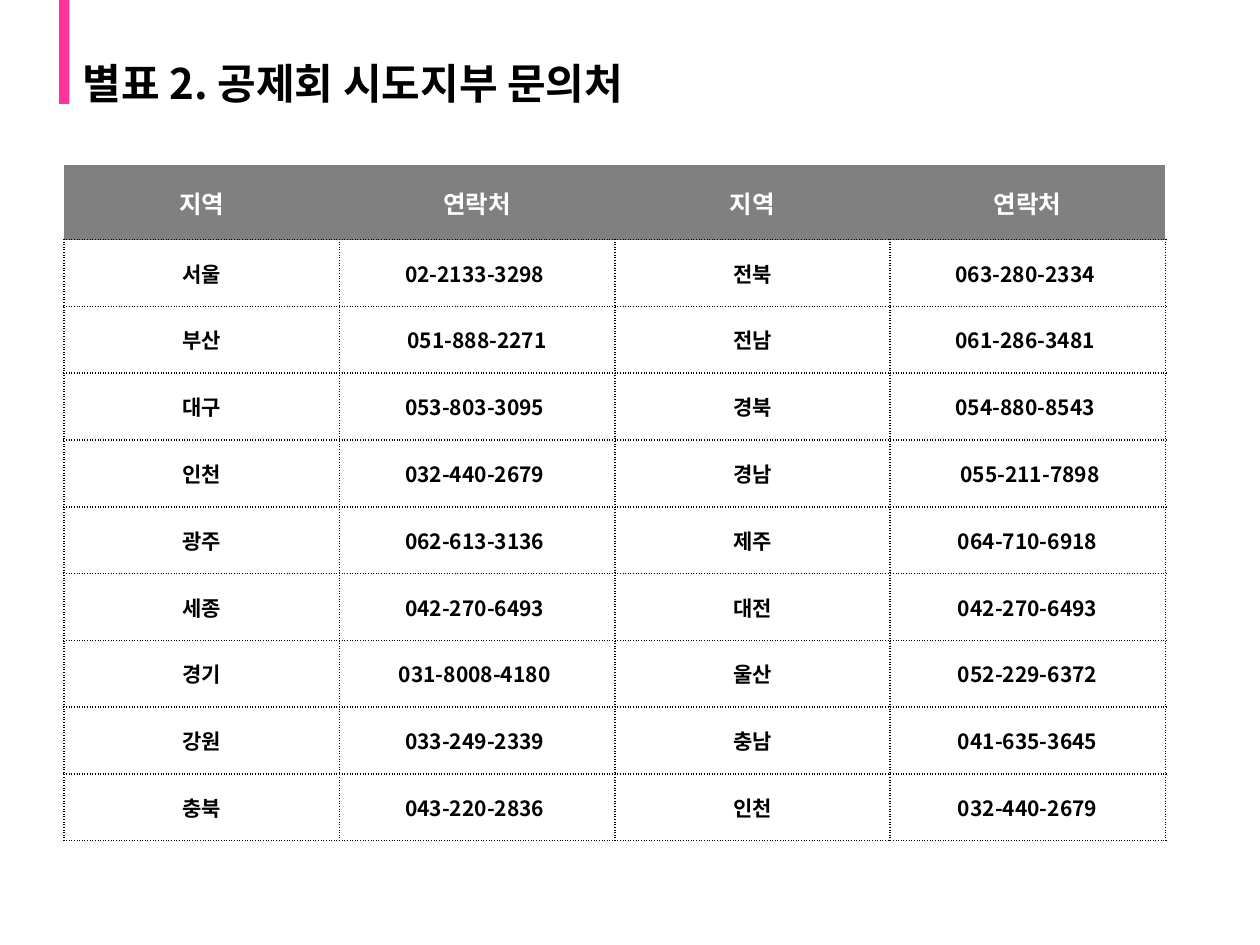
from dataclasses import dataclass

import lxml.etree
import pptx
import pptx.dml.color
import pptx.enum.shapes
import pptx.enum.text
import pptx.oxml.ns
import pptx.util

SLIDE_WIDTH = pptx.util.Inches(10)
SLIDE_HEIGHT = pptx.util.Inches(7.5)
PINK = pptx.dml.color.RGBColor(0xFF, 0x33, 0x99)
GRAY = pptx.dml.color.RGBColor(0x80, 0x80, 0x80)
WHITE = pptx.dml.color.RGBColor(0xFF, 0xFF, 0xFF)
BLACK = pptx.dml.color.RGBColor(0, 0, 0)
KOREAN_FONT = "Noto Sans CJK KR"
HEADER_FONT = "Arial"
PLAIN_TABLE_STYLE = "{2D5ABB26-0587-4C30-8999-92F81FD0307C}"
HEADER_HEIGHT = pptx.util.Inches(0.59)
ROW_HEIGHT = pptx.util.Inches(0.53)

HEADINGS = ("지역", "연락처") * 2
CONTACTS = (
    ("서울", "02-2133-3298 ", "전북", "063-280-2334 "),
    ("부산", "051-888-2271", "전남", "061-286-3481 "),
    ("대구", "053-803-3095 ", "경북", "054-880-8543 "),
    ("인천", "032-440-2679 ", "경남", " 055-211-7898"),
    ("광주", "062-613-3136 ", "제주", "064-710-6918"),
    ("세종", "042-270-6493 ", "대전", "042-270-6493"),
    ("경기", "031-8008-4180 ", "울산", "052-229-6372"),
    ("강원", "033-249-2339 ", "충남", "041-635-3645"),
    ("충북", "043-220-2836 ", "인천", "032-440-2679"),
)


@dataclass(frozen=True)
class Area:
    left: float
    top: float
    width: float
    height: float

    def box(self) -> tuple[int, int, int, int]:
        return (
            int(self.left * SLIDE_WIDTH),
            int(self.top * SLIDE_HEIGHT),
            int(self.width * SLIDE_WIDTH),
            int(self.height * SLIDE_HEIGHT),
        )


@dataclass(frozen=True)
class CellStyle:
    font: str
    size: float
    color: pptx.dml.color.RGBColor
    fill: pptx.dml.color.RGBColor | None
    edges: tuple[str, ...]


ACCENT_AREA = Area(0.047, 0, 0.008, 0.11)
TITLE_AREA = Area(0.056, 0.056, 0.717, 0.063)
TABLE_AREA = Area(0.051, 0.175, 0.874, 0.714)
HEADER_STYLE = CellStyle(HEADER_FONT, 14, WHITE, GRAY, ("lnB",))
BODY_STYLE = CellStyle(KOREAN_FONT, 12, BLACK, None, ("lnL", "lnR", "lnT", "lnB"))


def write_text(frame, text: str, *, font: str, size: float, color, align) -> None:
    paragraph = frame.paragraphs[0]
    paragraph.alignment = align
    run = paragraph.add_run()
    run.text = text
    run.font.name = font
    run.font.size = pptx.util.Pt(size)
    run.font.bold = True
    run.font.color.rgb = color
    east_asian = lxml.etree.Element(pptx.oxml.ns.qn("a:ea"), typeface=KOREAN_FONT)
    run.font._element.find(pptx.oxml.ns.qn("a:latin")).addnext(east_asian)


def add_dotted_edge(cell, edge: str) -> None:
    qualified = pptx.oxml.ns.qn
    properties = cell._tc.get_or_add_tcPr()
    line = lxml.etree.SubElement(
        properties, qualified(f"a:{edge}"), w=str(pptx.util.Pt(1))
    )
    fill = lxml.etree.SubElement(line, qualified("a:solidFill"))
    lxml.etree.SubElement(fill, qualified("a:srgbClr"), val=str(BLACK))
    lxml.etree.SubElement(line, qualified("a:prstDash"), val="sysDot")


def format_cell(cell, text: str, style: CellStyle) -> None:
    cell.vertical_anchor = pptx.enum.text.MSO_ANCHOR.MIDDLE
    for edge in style.edges:
        add_dotted_edge(cell, edge)
    if style.fill is None:
        cell.fill.background()
    else:
        cell.fill.solid()
        cell.fill.fore_color.rgb = style.fill
    write_text(
        cell.text_frame,
        text,
        font=style.font,
        size=style.size,
        color=style.color,
        align=pptx.enum.text.PP_ALIGN.CENTER,
    )


def add_accent(slide) -> None:
    shape = slide.shapes.add_shape(
        pptx.enum.shapes.MSO_SHAPE.RECTANGLE, *ACCENT_AREA.box()
    )
    shape.shadow.inherit = False
    shape.fill.solid()
    shape.fill.fore_color.rgb = PINK
    shape.line.fill.background()


def add_title(slide) -> None:
    frame = slide.shapes.add_textbox(*TITLE_AREA.box()).text_frame
    frame.word_wrap = True
    frame.vertical_anchor = pptx.enum.text.MSO_ANCHOR.MIDDLE
    write_text(
        frame,
        "별표 2. 공제회 시도지부 문의처",
        font=KOREAN_FONT,
        size=24,
        color=BLACK,
        align=pptx.enum.text.PP_ALIGN.LEFT,
    )


def add_contact_table(slide) -> None:
    rows = (HEADINGS, *CONTACTS)
    graphic = slide.shapes.add_table(len(rows), len(HEADINGS), *TABLE_AREA.box())
    table = graphic.table
    table.first_row = False
    table.horz_banding = False
    style_id = table._tbl.tblPr.find(pptx.oxml.ns.qn("a:tableStyleId"))
    style_id.text = PLAIN_TABLE_STYLE
    for row_index, texts in enumerate(rows):
        is_header = row_index == 0
        table.rows[row_index].height = HEADER_HEIGHT if is_header else ROW_HEIGHT
        style = HEADER_STYLE if is_header else BODY_STYLE
        for column_index, text in enumerate(texts):
            format_cell(table.cell(row_index, column_index), text, style)


def main() -> None:
    presentation = pptx.Presentation()
    presentation.slide_width = SLIDE_WIDTH
    presentation.slide_height = SLIDE_HEIGHT
    slide = presentation.slides.add_slide(presentation.slide_layouts[6])
    add_accent(slide)
    add_title(slide)
    add_contact_table(slide)
    presentation.save("out.pptx")


if __name__ == "__main__":
    main()
